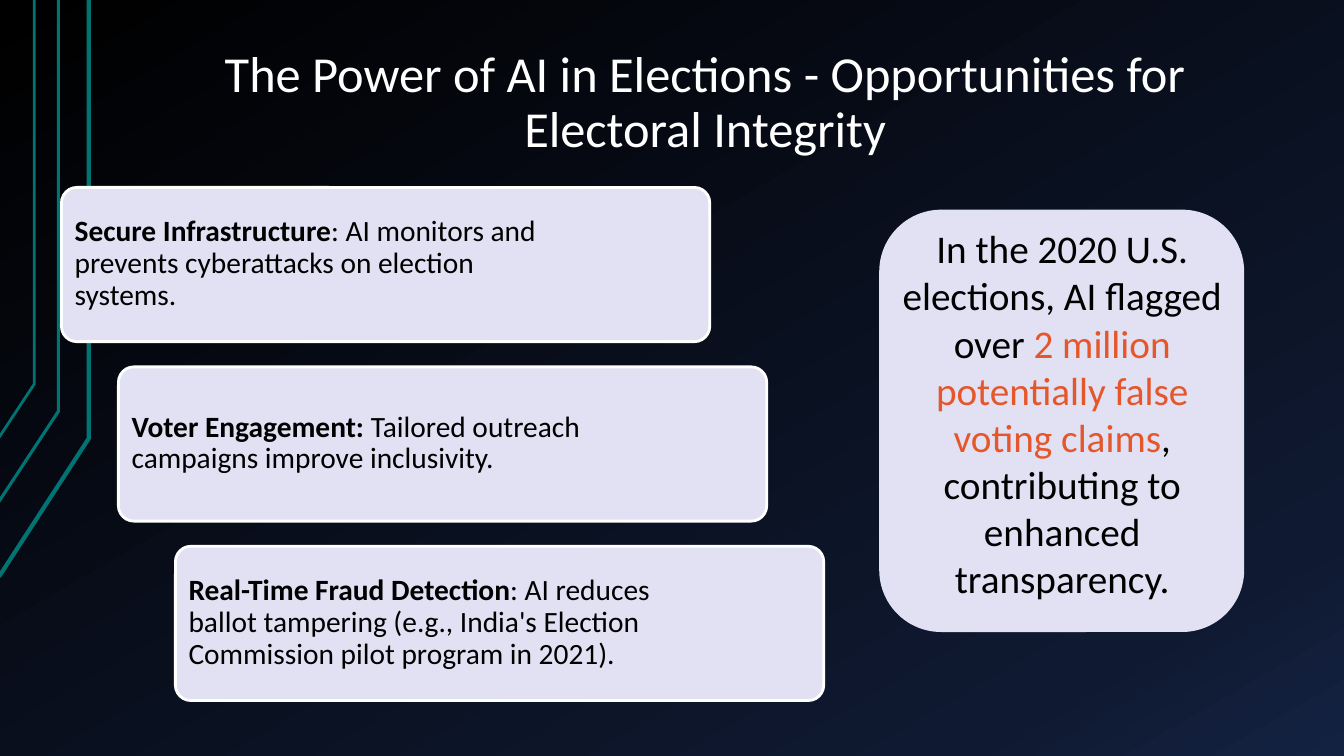
from copy import deepcopy

from lxml import etree
from pptx import Presentation
from pptx.dml.color import RGBColor
from pptx.enum.shapes import MSO_SHAPE
from pptx.enum.text import MSO_ANCHOR, PP_ALIGN
from pptx.oxml.ns import qn
from pptx.util import Inches, Pt

ROUNDED = MSO_SHAPE.ROUNDED_RECTANGLE
TOP, MIDDLE, BOTTOM = MSO_ANCHOR.TOP, MSO_ANCHOR.MIDDLE, MSO_ANCHOR.BOTTOM
LEFT, CENTER = PP_ALIGN.LEFT, PP_ALIGN.CENTER

FONT = "Calibri"
WHITE, BLACK = "FFFFFF", "000000"
LAVENDER, TEAL, ORANGE = "E1E1F3", "007373", "E5572B"

BACKGROUND_STOPS = [(0, BLACK), (0.85, "0F1931"), (1, "142242")]
# Line width in points, then the corner points in inches
CIRCUIT_LINES = [
    (3, [(-0.01, 5.72), (0.88, 4.35), (0.88, 0)]),
    (2.25, [(-0.02, 4.99), (0.58, 4.08), (0.58, 0)]),
    (2, [(-0.01, 4.34), (0.34, 3.81), (0.34, 0)]),
]
OPPORTUNITIES = [
    ("Secure Infrastructure",
     ": AI monitors and prevents cyberattacks on election systems."),
    ("Voter Engagement: ",
     "Tailored outreach campaigns improve inclusivity."),
    ("Real-Time Fraud Detection",
     ": AI reduces ballot tampering (e.g., India's Election Commission "
     "pilot program in 2021)."),
]


def color(hex_string):
    return RGBColor.from_string(hex_string)


def apply(target, values):
    for name, value in values.items():
        setattr(target, name, value)


def paint_background(slide):
    fill = slide.background.fill
    fill.gradient()
    fill.gradient_angle = 300
    stop_list = slide.element.find(".//" + qn("a:gsLst"))
    stop_list.append(deepcopy(stop_list[-1]))
    for stop, (position, hex_string) in zip(fill.gradient_stops, BACKGROUND_STOPS):
        stop.position = position
        stop.color.rgb = color(hex_string)


def add_circuit_line(slide, width, points):
    corners = [(Inches(x), Inches(y)) for x, y in points]
    builder = slide.shapes.build_freeform(*corners[0])
    builder.add_line_segments(corners[1:], close=False)
    shape = builder.convert_to_shape()
    shape.shadow.inherit = False
    shape.fill.background()
    shape.line.color.rgb = color(TEAL)
    shape.line.width = Pt(width)


def add_panel(slide, left, top, width, height, corner, outline=None):
    shape = slide.shapes.add_shape(
        ROUNDED, Inches(left), Inches(top), Inches(width), Inches(height))
    shape.adjustments[0] = corner
    shape.shadow.inherit = False
    shape.fill.solid()
    shape.fill.fore_color.rgb = color(LAVENDER)
    if outline:
        shape.line.color.rgb = color(outline)
        shape.line.width = Pt(2)
    else:
        shape.line.fill.background()


def add_text(slide, left, top, width, height, runs, size, anchor, insets, layout):
    """Add one paragraph; each run is (text, colour, bold)."""
    box = slide.shapes.add_textbox(
        Inches(left), Inches(top), Inches(width), Inches(height))
    side, end = (Inches(inset) for inset in insets)
    frame = box.text_frame
    apply(frame, {
        "word_wrap": True, "vertical_anchor": anchor,
        "margin_left": side, "margin_right": side,
        "margin_top": end, "margin_bottom": end,
    })
    paragraph = frame.paragraphs[0]
    apply(paragraph, layout)
    for text, hex_string, bold in runs:
        run = paragraph.add_run()
        run.text = text
        apply(run.font, {"name": FONT, "size": Pt(size), "bold": bold})
        run.font.color.rgb = color(hex_string)


def add_opportunity(slide, index, heading, detail):
    left, top = 0.61 + 0.565 * index, 1.86 + 1.78 * index
    add_panel(slide, left, top, 6.43, 1.53, 0.1, WHITE)
    add_text(slide, left + 0.04, top + 0.04, 4.78, 1.44,
             [(heading, BLACK, True), (detail, BLACK, False)],
             21, MIDDLE, (0.09, 0.09),
             {"alignment": LEFT, "line_spacing": 0.9, "space_after": Pt(7.35)})


def main():
    presentation = Presentation()
    presentation.slide_width = Inches(13.33)
    presentation.slide_height = Inches(7.5)
    slide = presentation.slides.add_slide(presentation.slide_layouts[6])

    # Background and circuit lines
    paint_background(slide)
    for width, points in CIRCUIT_LINES:
        add_circuit_line(slide, width, points)

    # Staggered opportunity cards
    for index, (heading, detail) in enumerate(OPPORTUNITIES):
        add_opportunity(slide, index, heading, detail)

    # Title
    add_text(slide, 1.33, 0.3, 11.33, 1.34,
             [("The Power of AI in Elections - Opportunities for Electoral Integrity",
               WHITE, False)],
             36, BOTTOM, (0.13, 0.07), {"alignment": CENTER, "line_spacing": 0.9})

    # Key figure callout
    add_panel(slide, 8.72, 2.08, 3.62, 4.19, 0.17)
    add_text(slide, 8.84, 2.18, 3.39, 4.02,
             [("In the 2020 U.S. elections, AI flagged over ", BLACK, False),
              ("2 million potentially false voting claims", ORANGE, False),
              (", contributing to enhanced transparency.", BLACK, False)],
             28, TOP, (0.1, 0.05), {"alignment": CENTER})

    presentation.save("out.pptx")


if __name__ == "__main__":
    main()
